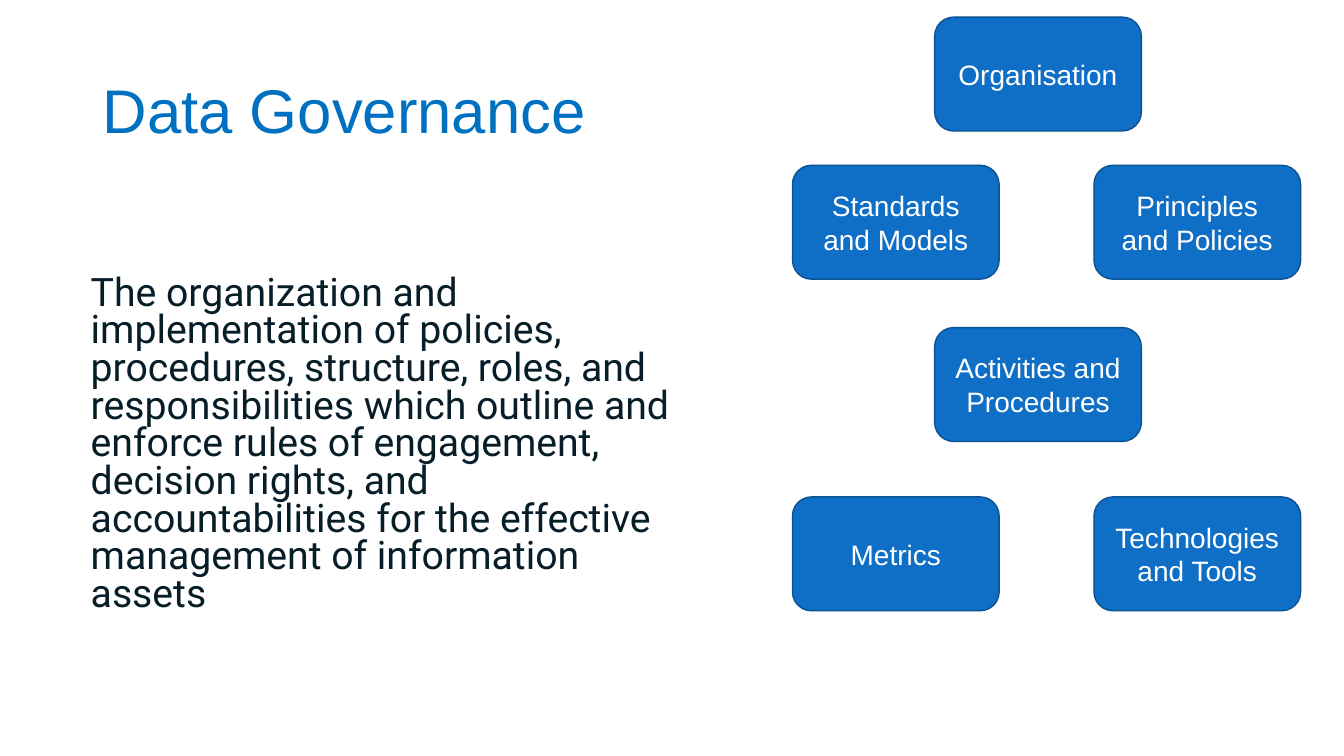
from dataclasses import dataclass

from lxml.etree import SubElement
from pptx import Presentation
from pptx.dml.color import RGBColor
from pptx.enum.shapes import MSO_SHAPE
from pptx.enum.text import MSO_ANCHOR, MSO_AUTO_SIZE, PP_ALIGN
from pptx.oxml.ns import qn
from pptx.shapes.placeholder import SlidePlaceholder
from pptx.slide import Slide
from pptx.text.text import _Paragraph
from pptx.util import Inches, Pt

COLORS = {
    "title": "0070C0",
    "body": "071D28",
    "box": "0F6FC6",
    "box_line": "0B5292",
    "box_text": "FFFFFF",
}
BOX_WIDTH, BOX_HEIGHT = 2.05, 1.13
LEFT, CENTER, RIGHT = 7.86, 9.27, 10.85
ROWS = (0.17, 1.64, 3.25, 4.93)


@dataclass(frozen=True)
class Component:
    label: str
    left: float
    top: float


COMPONENTS = (
    Component("Organisation", CENTER, ROWS[0]),
    Component("Principles and Policies", RIGHT, ROWS[1]),
    Component("Activities and Procedures", CENTER, ROWS[2]),
    Component("Metrics", LEFT, ROWS[3]),
    Component("Technologies and Tools", RIGHT, ROWS[3]),
    Component("Standards and Models", LEFT, ROWS[1]),
)
DEFINITION = (
    "The organization and implementation of policies, procedures, structure, "
    "roles, and responsibilities which outline and enforce rules of engagement, "
    "decision rights, and accountabilities for the effective management of "
    "information assets"
)


def rgb(name: str) -> RGBColor:
    return RGBColor.from_string(COLORS[name])


def format_runs(p: _Paragraph, font: str, size: float, color: str) -> None:
    for r in p.runs:
        r.font.name = font
        r.font.size = Pt(size)
        r.font.color.rgb = rgb(color)


def fill_placeholder(sp: SlidePlaceholder, text: str,
                     box: tuple[float, float, float, float],
                     anchor: MSO_ANCHOR, line_spacing: float) -> _Paragraph:
    """Place the text flush left without a bullet and return its paragraph."""
    sp.left, sp.top, sp.width, sp.height = map(Inches, box)
    tf = sp.text_frame
    tf.text = text
    tf.word_wrap = True
    tf.auto_size = MSO_AUTO_SIZE.NONE
    tf.vertical_anchor = anchor
    p = tf.paragraphs[0]
    pPr = p._p.get_or_add_pPr()
    pPr.set("marL", "0")
    pPr.set("indent", "0")
    SubElement(pPr, qn("a:buNone"))
    p.alignment = PP_ALIGN.LEFT
    p.line_spacing = line_spacing
    p.space_before = Pt(0)
    return p


def add_component(s: Slide, item: Component) -> None:
    sp = s.shapes.add_shape(
        MSO_SHAPE.ROUNDED_RECTANGLE, Inches(item.left), Inches(item.top),
        Inches(BOX_WIDTH), Inches(BOX_HEIGHT))
    sp.shadow.inherit = False
    sp.fill.solid()
    sp.fill.fore_color.rgb = rgb("box")
    sp.line.color.rgb = rgb("box_line")
    sp.line.width = Pt(1)
    tf = sp.text_frame
    tf.text = item.label
    tf.word_wrap = True
    tf.vertical_anchor = MSO_ANCHOR.MIDDLE
    p = tf.paragraphs[0]
    p.alignment = PP_ALIGN.CENTER
    format_runs(p, "Arial", 20, "box_text")


def main() -> None:
    prs = Presentation()
    prs.slide_width, prs.slide_height = Inches(13.33), Inches(7.5)
    s = prs.slides.add_slide(prs.slide_layouts[1])

    title = fill_placeholder(s.shapes.title, "Data Governance",
                             (0.92, 0.4, 11.5, 1.45), MSO_ANCHOR.MIDDLE, 0.9)
    format_runs(title, "Arial", 44, "title")
    body = fill_placeholder(s.placeholders[1], DEFINITION,
                            (0.8, 2.69, 6.01, 3.37), MSO_ANCHOR.TOP, 0.8)
    format_runs(body, "Roboto", 28, "body")

    for item in COMPONENTS:
        add_component(s, item)
    prs.save("out.pptx")


if __name__ == "__main__":
    main()
